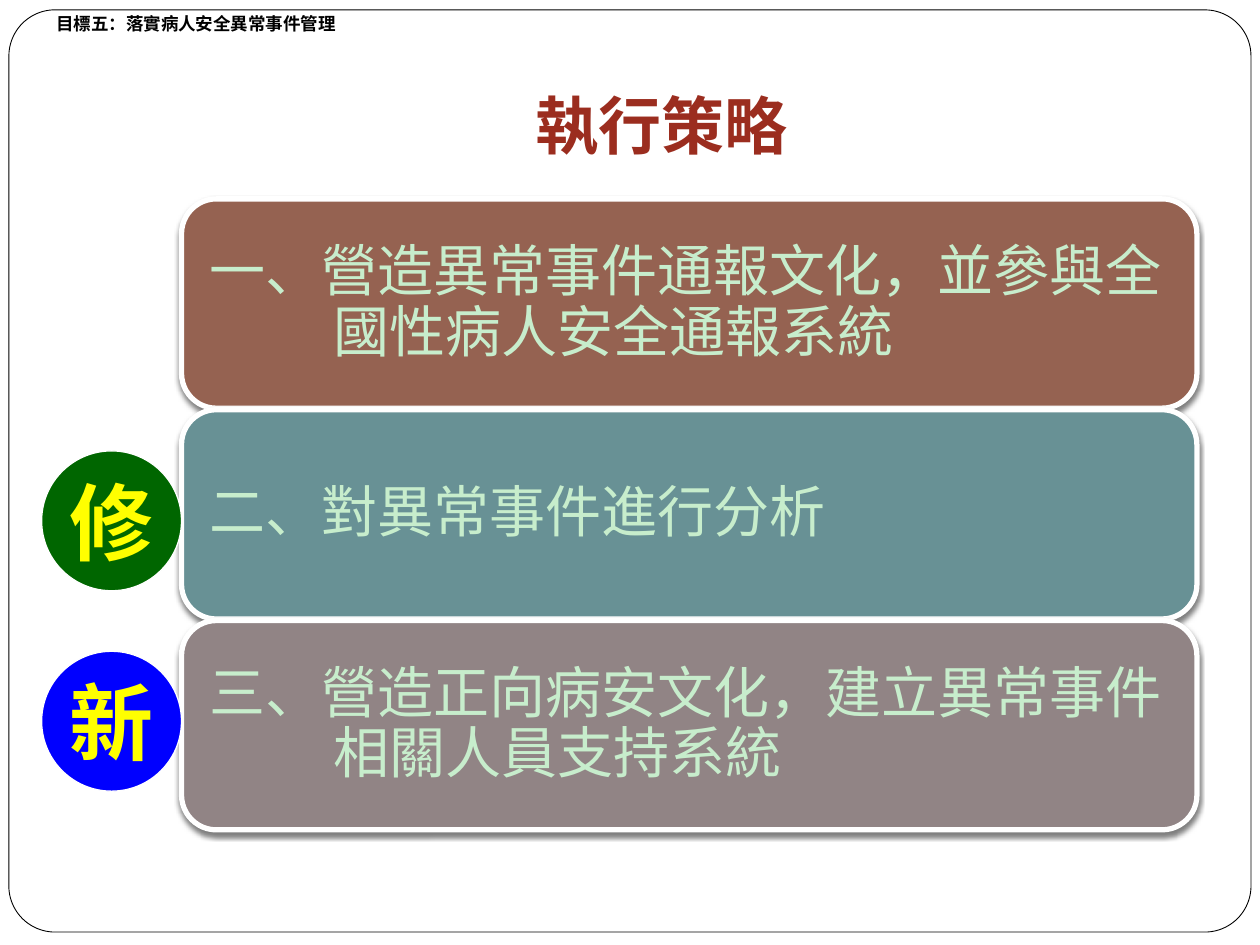
import lxml.etree
import pptx
import pptx.dml.color
import pptx.enum.shapes
import pptx.enum.text
import pptx.oxml.ns
import pptx.util

Cm = pptx.util.Cm
Pt = pptx.util.Pt
RGBColor = pptx.dml.color.RGBColor
Shape = pptx.enum.shapes.MSO_SHAPE
Align = pptx.enum.text.PP_ALIGN
Anchor = pptx.enum.text.MSO_ANCHOR
qn = pptx.oxml.ns.qn

WHITE = RGBColor(0xFF, 0xFF, 0xFF)
BLACK = RGBColor(0x00, 0x00, 0x00)
MINT = RGBColor(0xC7, 0xED, 0xCC)
BRICK = RGBColor(0x9B, 0x2D, 0x1F)
BROWN = RGBColor(0x95, 0x62, 0x51)
TEAL = RGBColor(0x68, 0x91, 0x95)
MAUVE = RGBColor(0x91, 0x84, 0x85)
GREEN = RGBColor(0x00, 0x66, 0x00)
BLUE = RGBColor(0x00, 0x00, 0xFF)
YELLOW = RGBColor(0xFF, 0xFF, 0x00)

BAND_LEFT, BAND_TOP = 3.66, 4.01
BAND_WIDTH, BAND_HEIGHT, BAND_PITCH = 20.47, 4.22, 4.25
BADGE_SIZE = 2.82

STRATEGIES = [
    ("一、營造異常事件通報文化，並參與全國性病人安全通報系統", BROWN, True),
    ("二、對異常事件進行分析", TEAL, False),
    ("三、營造正向病安文化，建立異常事件相關人員支持系統", MAUVE, True),
]
BADGES = [("新", BLUE, 13.13), ("修", GREEN, 9.09)]


def add_outlined(slide, kind, box, fill, line, line_width):
    outlined = slide.shapes.add_shape(kind, *map(Cm, box))
    outlined.shadow.inherit = False
    outlined.fill.solid()
    outlined.fill.fore_color.rgb = fill
    outlined.line.color.rgb = line
    outlined.line.width = Pt(line_width)
    return outlined


def write(frame, wording, size, color, bold=False, align=Align.LEFT):
    paragraph = frame.paragraphs[0]
    paragraph.alignment = align
    run = paragraph.add_run()
    run.text = wording
    run.font.name = "Arial"
    run.font.size = Pt(size)
    run.font.bold = bold
    run.font.color.rgb = color
    return paragraph


def add_label(slide, box, anchor=Anchor.TOP):
    frame = slide.shapes.add_textbox(*map(Cm, box)).text_frame
    frame.word_wrap = True
    frame.vertical_anchor = anchor
    return frame


def add_drop_shadow(band):
    effects = band._element.spPr.find(qn("a:effectLst"))
    shadow = lxml.etree.SubElement(
        effects, qn("a:outerShdw"), blurRad=str(Pt(3)), dist=str(Pt(2)),
        dir="5400000", algn="ctr", rotWithShape="0")
    tint = lxml.etree.SubElement(shadow, qn("a:srgbClr"), val="000000")
    lxml.etree.SubElement(tint, qn("a:alpha"), val="50000")


def add_strategy(slide, top, wording, fill, hanging):
    band = add_outlined(slide, Shape.ROUNDED_RECTANGLE,
                        (BAND_LEFT, top, BAND_WIDTH, BAND_HEIGHT), fill, WHITE, 3)
    add_drop_shadow(band)
    frame = add_label(slide, (BAND_LEFT + 0.23, top + 0.21, 20.04, 3.81), Anchor.MIDDLE)
    frame.margin_left = frame.margin_right = Cm(0.33)
    frame.margin_top = frame.margin_bottom = Cm(0.33)
    paragraph = write(frame, wording, 32, MINT)
    paragraph.line_spacing = 0.9
    if hanging:
        properties = paragraph._p.get_or_add_pPr()
        properties.set("marL", str(Cm(2.5)))
        properties.set("indent", str(-Cm(2.5)))


def add_badge(slide, wording, fill, top):
    badge = add_outlined(slide, Shape.OVAL, (0.84, top, BADGE_SIZE, BADGE_SIZE),
                         fill, WHITE, 0.75)
    badge.text_frame.word_wrap = False
    badge.text_frame.vertical_anchor = Anchor.MIDDLE
    write(badge.text_frame, wording, 48, YELLOW, True, Align.CENTER)


def main():
    deck = pptx.Presentation()
    deck.slide_width, deck.slide_height = Cm(25.4), Cm(19.05)
    slide = deck.slides.add_slide(deck.slide_layouts[6])
    slide.background.fill.solid()
    slide.background.fill.fore_color.rgb = WHITE

    border = add_outlined(slide, Shape.ROUNDED_RECTANGLE,
                          (0.18, 0.2, 25.04, 18.59), WHITE, BLACK, 0.5)
    border.adjustments[0] = 0.05

    goal = add_label(slide, (0.89, 0.13, 7.19, 0.69))
    write(goal, "目標五：落實病人安全異常事件管理", 10, BLACK, True)

    title = add_label(slide, (2.54, 0.33, 21.59, 3.18), Anchor.BOTTOM)
    title.margin_bottom = Cm(0.25)
    write(title, "執行策略", 36, BRICK, True, Align.CENTER).line_spacing = 1.76

    for row, strategy in enumerate(STRATEGIES):
        add_strategy(slide, BAND_TOP + row * BAND_PITCH, *strategy)
    for badge in BADGES:
        add_badge(slide, *badge)

    deck.save("out.pptx")


if __name__ == "__main__":
    main()
